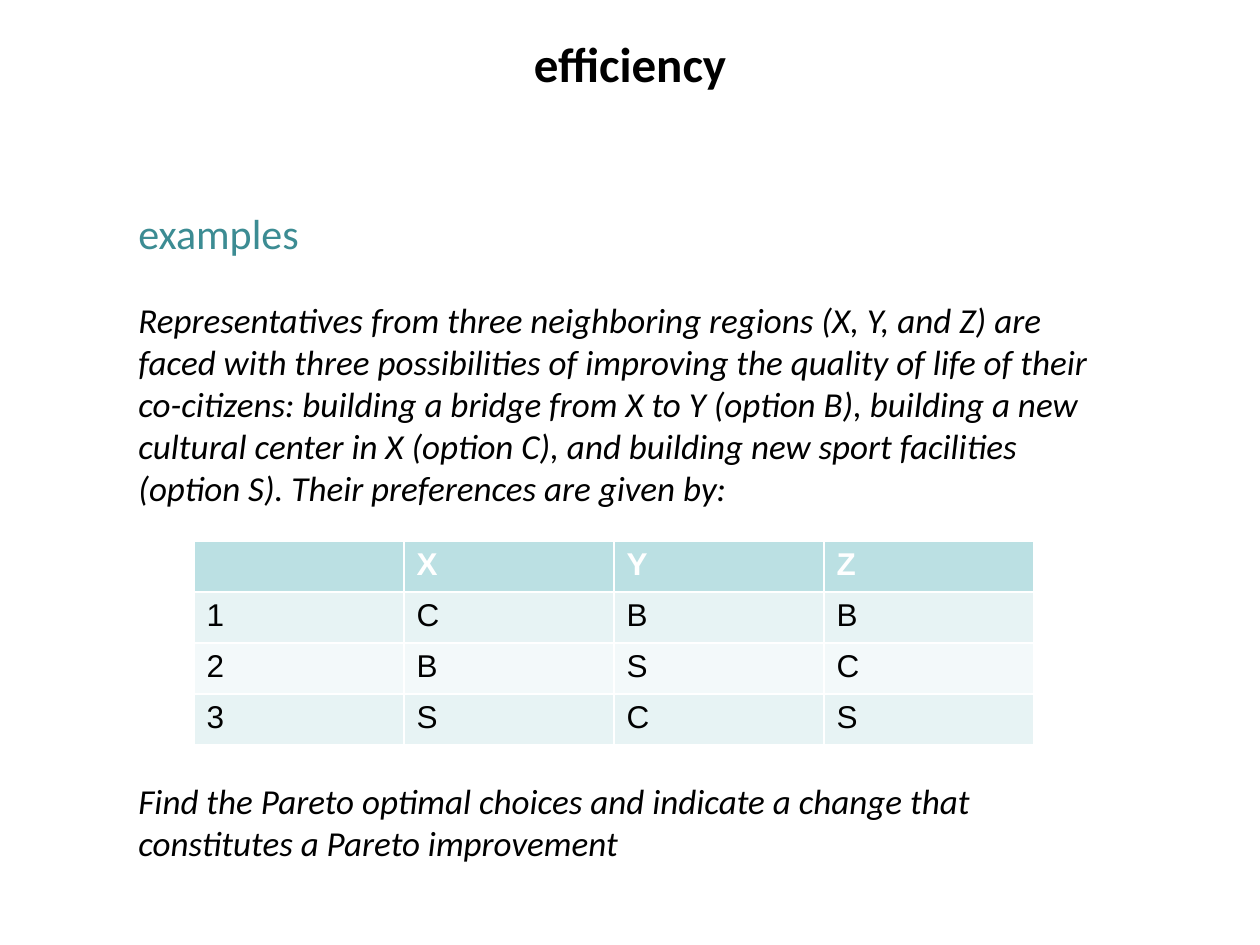
"""Build the efficiency slide with a preference table and an exercise."""
from pptx import Presentation
from pptx import util as u
from pptx.dml.color import RGBColor
from pptx.enum import text

PX = u.Inches(1) / 126
BLACK = RGBColor(0x00, 0x00, 0x00)
WHITE = RGBColor(0xFF, 0xFF, 0xFF)
TEAL = RGBColor(0x3C, 0x8C, 0x93)
HEADER = RGBColor(0xBB, 0xE0, 0xE3)
BANDS = [RGBColor(0xF3, 0xF9, 0xFA), RGBColor(0xE7, 0xF3, 0xF4)]

TASK = [
    "Representatives from three neighboring regions (X, Y, and Z) are faced with "
    "three possibilities of improving the quality of life of their co-citizens: "
    "building a bridge from X to Y (option B), building a new cultural center in X "
    "(option C), and building new sport facilities (option S). Their preferences "
    "are given by:",
    "Find the Pareto optimal choices and indicate a change that constitutes a "
    "Pareto improvement",
]
PREFERENCES = [" XYZ", "1CBB", "2BSC", "3SCS"]


def px(*values):
    return [u.Emu(round(v * PX)) for v in values]


def style(p, name, size, color, bold=False, italic=False):
    for r in p.runs:
        r.font.name = name
        r.font.size = u.Pt(size)
        r.font.color.rgb = color
        r.font.bold = bold
        r.font.italic = italic


prs = Presentation()
prs.slide_width, prs.slide_height = px(1260, 945)
s = prs.slides.add_slide(prs.slide_layouts[5])

title = s.shapes.title
title.left, title.top, title.width, title.height = px(63, 10, 1134, 158)
tf = title.text_frame
tf.text = "efficiency"
tf.vertical_anchor = text.MSO_ANCHOR.TOP
tf.margin_top = px(23)[0]
tf.paragraphs[0].alignment = text.PP_ALIGN.CENTER
style(tf.paragraphs[0], "Calibri", 28, BLACK, bold=True)

tf = s.shapes.add_textbox(*px(126, 199, 1066, 63)).text_frame
tf.word_wrap = True
tf.margin_top = px(9)[0]
tf.text = "examples"
style(tf.paragraphs[0], "Calibri", 24, TEAL)

tf = s.shapes.add_textbox(*px(126, 292, 1002, 631)).text_frame
tf.word_wrap = True
tf.text = "\n".join(TASK)
for p in tf.paragraphs:
    style(p, "Calibri", 20, BLACK, italic=True)
tf.paragraphs[1].space_before = u.Pt(155)

table = s.shapes.add_table(4, 4, *px(194, 541, 840, 204)).table
for i, row in enumerate(PREFERENCES):
    for j, value in enumerate(row):
        cell = table.cell(i, j)
        cell.fill.solid()
        cell.fill.fore_color.rgb = BANDS[i % 2] if i else HEADER
        cell.text = value.strip()
        style(cell.text_frame.paragraphs[0], "Arial", 18,
              BLACK if i else WHITE, bold=i == 0)

prs.save("out.pptx")
